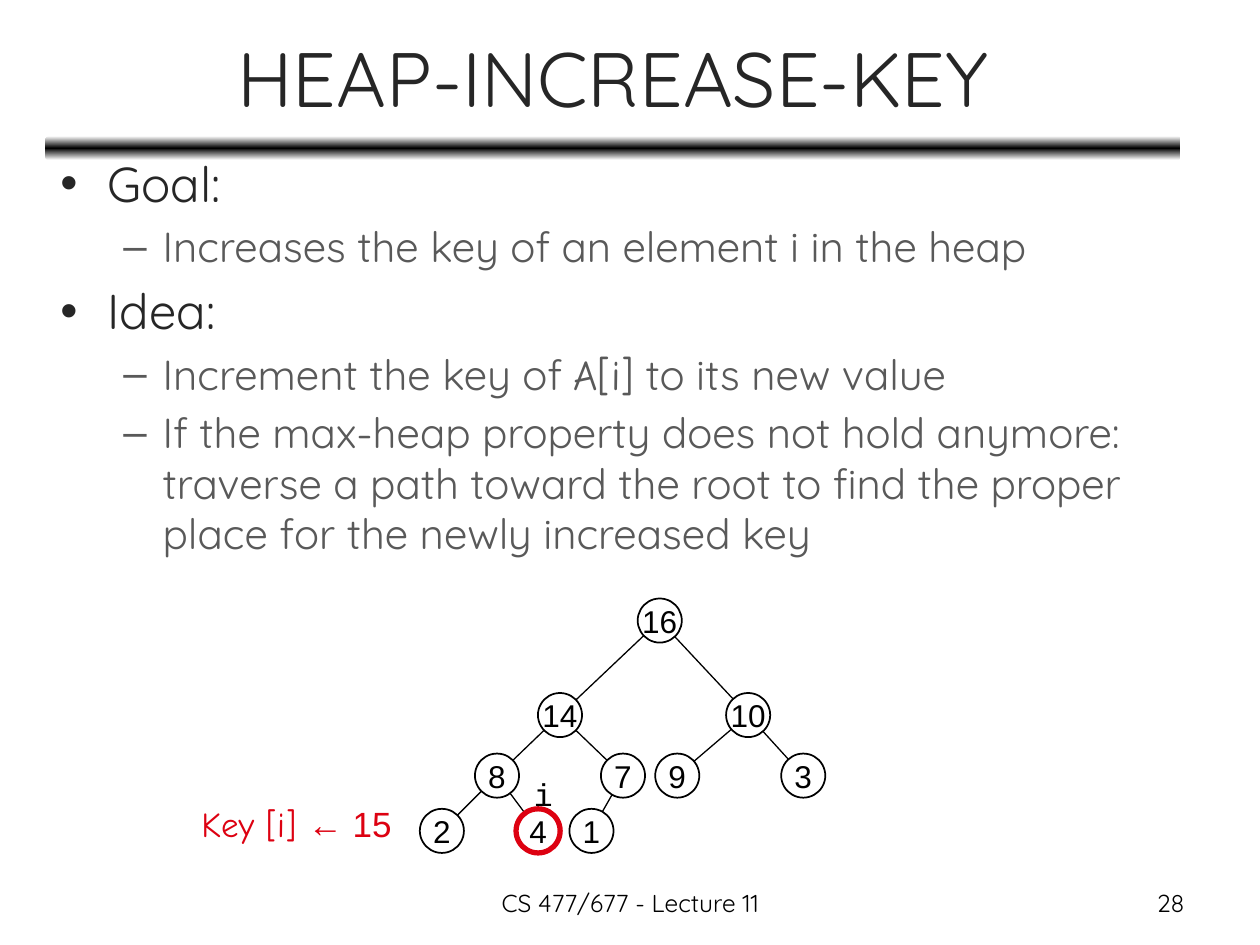
import copy

import lxml.etree
import pptx
import pptx.dml.color
import pptx.enum.shapes
import pptx.enum.text
import pptx.oxml.ns
import pptx.util

Pt = pptx.util.Pt
ALIGN = pptx.enum.text.PP_ALIGN
ANCHOR = pptx.enum.text.MSO_ANCHOR
SHAPE = pptx.enum.shapes.MSO_SHAPE
qn = pptx.oxml.ns.qn

# Content
TITLE = "HEAP-INCREASE-KEY"
BODY = [  # (level, [(text, font role)])
    (0, [("Goal:", "main")]),
    (1, [("Increases the key of an element i in the heap", "main")]),
    (0, [("Idea:", "main")]),
    (1, [("Increment the key of ", "main"), ("A[i]", "math"),
         (" to its new value", "main")]),
    (1, [("If the max-heap property does not hold anymore: traverse a path "
          "toward the root to find the proper place for the newly increased key",
          "main")]),
]
HEAP = [16, 14, 10, 8, 7, 9, 3, 2, 4, 1]  # array order: children of k at 2k+1, 2k+2
NODE_X = [377, 320, 427.5, 284, 356, 387, 459, 252.5, 307.5, 338]
LEVEL_Y = [354.6, 408.6, 443.2, 474.8]
MARKED = 4
KEY_NOTE = [("Key [i] ", "math"), ("← 15", "plain")]
FOOTER = "CS 477/677 - Lecture 11"
PAGE = "28"

THEME = {
    "fonts": {"main": "Quicksand", "math": "Comic Neue", "plain": "Arial",
              "code": "Courier New"},
    "colours": {"title": "262626", "detail": "595959", "ink": "000000",
                "paper": "FFFFFF", "accent": "DD0111"},
    "sizes": {"title": 44, "goal": 28, "detail": 24, "note": 20, "node": 18,
              "footer": 14},
}
LEVELS = [  # bullet, left margin, hanging indent, size, colour
    ("•", 27, 27, "goal", "title"),
    ("–", 58.5, 22.5, "detail", "detail"),
]
NODE_SIZE = 25.2


def colour(name):
    return pptx.dml.color.RGBColor.from_string(THEME["colours"][name])


def fill_paragraph(paragraph, pieces, size, colour_name, align=ALIGN.LEFT):
    paragraph.alignment = align
    for text, role in pieces:
        run = paragraph.add_run()
        run.text = text
        run.font.size = Pt(THEME["sizes"][size])
        run.font.name = THEME["fonts"][role]
        run.font.color.rgb = colour(colour_name)


def add_text_box(slide, box, wrap=True, anchor=ANCHOR.TOP):
    frame = slide.shapes.add_textbox(*map(Pt, box)).text_frame
    frame.word_wrap = wrap
    frame.vertical_anchor = anchor
    return frame


def add_bullet(paragraph, bullet, margin, hanging):
    properties = paragraph._p.get_or_add_pPr()
    properties.set("marL", str(Pt(margin)))
    properties.set("indent", str(-Pt(hanging)))
    lxml.etree.SubElement(properties, qn("a:buFont")).set("typeface", "Arial")
    lxml.etree.SubElement(properties, qn("a:buChar")).set("char", bullet)


def add_rule(slide):
    rule = slide.shapes.add_shape(SHAPE.ROUNDED_RECTANGLE,
                                  Pt(26), Pt(77.8), Pt(648.7), Pt(13.7))
    rule.shadow.inherit = False
    rule.line.fill.background()
    rule.fill.gradient()
    rule.fill.gradient_angle = 90
    stop_list = rule._element.spPr.find(".//" + qn("a:gsLst"))
    stop_list.append(copy.deepcopy(stop_list[0]))
    for stop, position, name in zip(rule.fill.gradient_stops, (0, 0.5, 1),
                                    ("paper", "ink", "paper")):
        stop.position = position
        stop.color.rgb = colour(name)


def add_body(slide):
    frame = add_text_box(slide, (27.4, 84.2, 648, 399.6))
    for index, (level, pieces) in enumerate(BODY):
        paragraph = frame.add_paragraph() if index else frame.paragraphs[0]
        bullet, margin, hanging, size, colour_name = LEVELS[level]
        paragraph.level = level
        paragraph.space_before = Pt(0.2 * THEME["sizes"][size])
        fill_paragraph(paragraph, pieces, size, colour_name)
        add_bullet(paragraph, bullet, margin, hanging)


def add_edge(slide, start, end):
    edge = slide.shapes.add_connector(pptx.enum.shapes.MSO_CONNECTOR.STRAIGHT,
                                      *map(Pt, start + end))
    edge.line.color.rgb = colour("ink")
    edge.line.width = Pt(0.75)
    lxml.etree.SubElement(edge._element.spPr, qn("a:effectLst"))


def add_node(slide, key, centre):
    left, top = (value - NODE_SIZE / 2 for value in centre)
    node = slide.shapes.add_shape(SHAPE.OVAL, Pt(left), Pt(top),
                                  Pt(NODE_SIZE), Pt(NODE_SIZE))
    node.shadow.inherit = False
    node.fill.solid()
    node.fill.fore_color.rgb = colour("paper")
    marked = key == MARKED
    node.line.color.rgb = colour("accent" if marked else "ink")
    node.line.width = Pt(3 if marked else 1)
    frame = node.text_frame
    frame.word_wrap = False
    frame.vertical_anchor = ANCHOR.MIDDLE
    fill_paragraph(frame.paragraphs[0], [(str(key), "plain")], "node", "ink",
                   ALIGN.CENTER)


def add_heap(slide):
    # A node's level follows from its 1-based index in the array
    centres = [(x, LEVEL_Y[(index + 1).bit_length() - 1])
               for index, x in enumerate(NODE_X)]
    for child in range(1, len(HEAP)):
        add_edge(slide, centres[(child - 1) // 2], centres[child])
    for key, centre in zip(HEAP, centres):
        add_node(slide, key, centre)


def main():
    presentation = pptx.Presentation()
    presentation.slide_width, presentation.slide_height = Pt(720), Pt(540)
    slide = presentation.slides.add_slide(presentation.slide_layouts[6])

    # Heading and bullets
    add_rule(slide)
    title = add_text_box(slide, (26.6, 7.9, 648, 71.3), anchor=ANCHOR.MIDDLE)
    fill_paragraph(title.paragraphs[0], [(TITLE, "main")], "title", "title",
                   ALIGN.CENTER)
    add_body(slide)

    # Heap and its labels
    add_heap(slide)
    index_label = add_text_box(slide, (298, 439.2, 18.7, 28.8), wrap=False)
    fill_paragraph(index_label.paragraphs[0], [("i", "code")], "node", "ink")
    key_note = add_text_box(slide, (108, 455, 128.2, 31), wrap=False)
    fill_paragraph(key_note.paragraphs[0], KEY_NOTE, "note", "accent")

    # Footer
    for text, left, width, align in ((FOOTER, 246.2, 228.2, ALIGN.CENTER),
                                     (PAGE, 516.2, 167.8, ALIGN.RIGHT)):
        footer = add_text_box(slide, (left, 504, width, 25.2))
        fill_paragraph(footer.paragraphs[0], [(text, "main")], "footer", "ink",
                       align)

    presentation.save("out.pptx")


if __name__ == "__main__":
    main()
